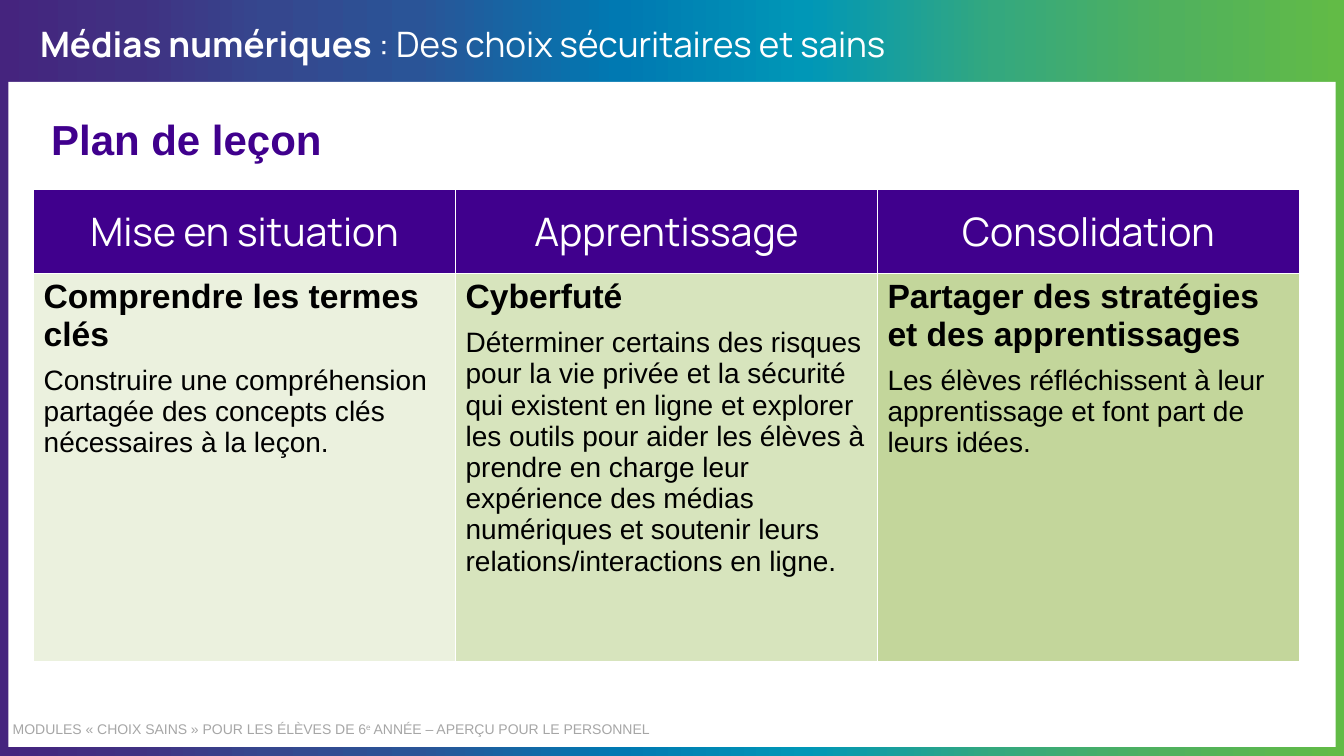
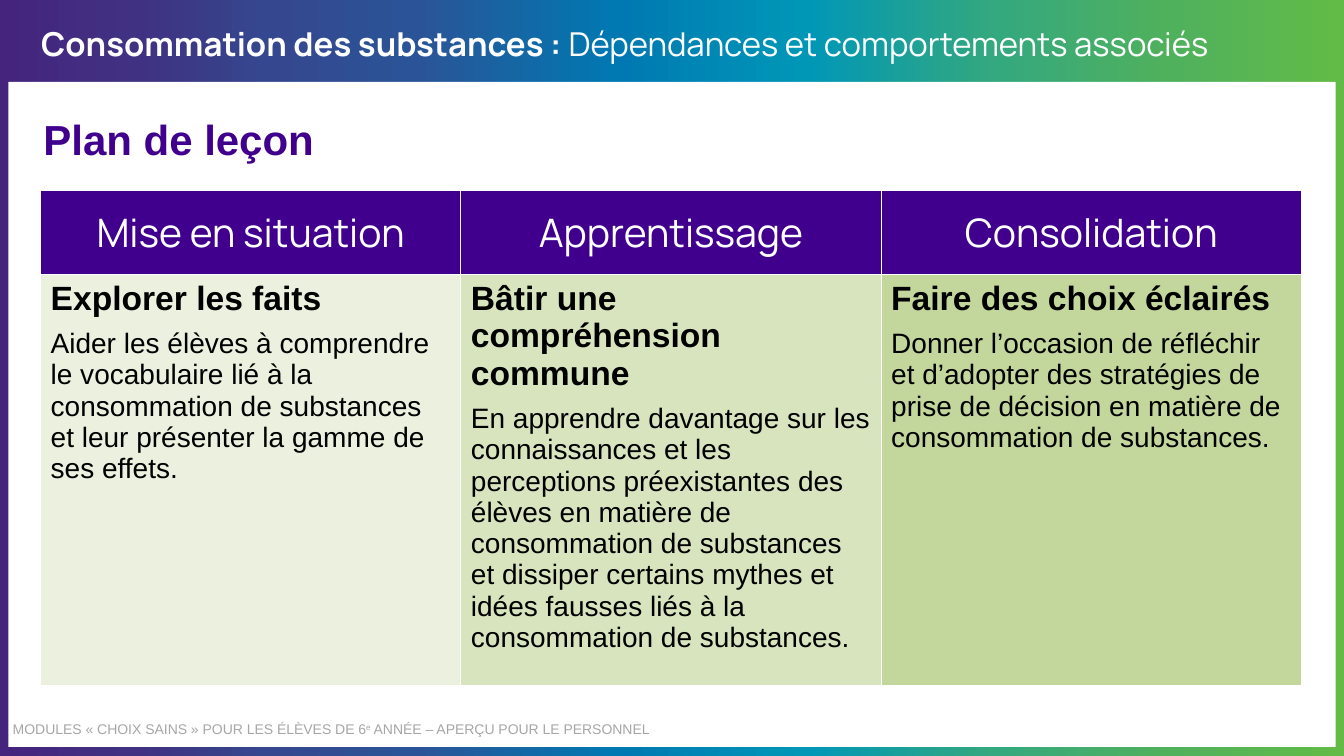
from lxml.etree import SubElement
from pptx import Presentation
from pptx.dml.color import RGBColor as RGB
from pptx.enum.shapes import MSO_SHAPE as SHAPE
from pptx.enum.text import MSO_ANCHOR as ANCHOR, PP_ALIGN as ALIGN
from pptx.oxml.ns import qn
from pptx.util import Pt

WHITE = RGB(0xFF, 0xFF, 0xFF)
BLACK = RGB(0, 0, 0)
GREY = RGB(0xA6, 0xA6, 0xA6)
PURPLE = RGB(0x40, 0x00, 0x8D)
GREENS = [RGB(0xEB, 0xF1, 0xDE), RGB(0xD7, 0xE4, 0xBD), RGB(0xC3, 0xD6, 0x9B)]
STOPS = [(0, "45247E"), (10, "403182"), (20, "35478E"), (31, "2A5497"),
         (46, "0079B2"), (60, "0097B7"), (74, "34A87E"), (87, "50B15D"),
         (100, "62BB46")]
HEADS = ["Mise en situation", "Apprentissage", "Consolidation"]
FOOTER = ["MODULES « CHOIX SAINS » POUR LES ÉLÈVES DE 6", "e",
          " ANNÉE – APERÇU POUR LE PERSONNEL"]
WIDE, HIGH = 960, 540
HEAD_H = 60

# Title: bold part, light part, size, left; heading left;
# table: left, top, column width, body height; then the three cells
PLANS = [
    dict(bold="Médias numériques ", light=": Des choix sécuritaires et sains",
         size=25, left=21.6, head=29.5, grid=(24, 135.4, 301.4, 277),
         cells=[
             ("Comprendre les termes clés",
              "Construire une compréhension partagée des concepts clés "
              "nécessaires à la leçon."),
             ("Cyberfuté",
              "Déterminer certains des risques pour la vie privée et la "
              "sécurité qui existent en ligne et explorer les outils pour "
              "aider les élèves à prendre en charge leur expérience des "
              "médias numériques et soutenir leurs relations/interactions "
              "en ligne."),
             ("Partager des stratégies et des apprentissages",
              "Les élèves réfléchissent à leur apprentissage et font part "
              "de leurs idées."),
         ]),
    dict(bold="Consommation des substances : ",
         light="Dépendances et comportements associés",
         size=23.5, left=22.3, head=24, grid=(29, 136.2, 300.2, 293.5),
         cells=[
             ("Explorer les faits",
              "Aider les élèves à comprendre le vocabulaire lié à la "
              "consommation de substances et leur présenter la gamme de "
              "ses effets."),
             ("Bâtir une compréhension commune",
              "En apprendre davantage sur les connaissances et les "
              "perceptions préexistantes des élèves en matière de "
              "consommation de substances et dissiper certains mythes et "
              "idées fausses liés à la consommation de substances."),
             ("Faire des choix éclairés",
              "Donner l’occasion de réfléchir et d’adopter des stratégies "
              "de prise de décision en matière de consommation de "
              "substances."),
         ]),
]


def style(font, size, color, name="Arial", bold=False):
    font.size, font.name, font.bold = Pt(size), name, bold
    font.color.rgb = color


def add_box(slide, left, top, width, height):
    box = slide.shapes.add_textbox(Pt(left), Pt(top), Pt(width), Pt(height))
    box.text_frame.word_wrap = True
    return box


prs = Presentation()
prs.slide_width, prs.slide_height = Pt(WIDE), Pt(HIGH)

for plan in PLANS:
    slide = prs.slides.add_slide(prs.slide_layouts[6])

    # Gradient frame and white panel
    frame = slide.shapes.add_shape(SHAPE.RECTANGLE, 0, 0, Pt(WIDE), Pt(HIGH))
    frame.fill.gradient()
    frame.fill.gradient_angle = 0
    stops = next(frame.element.iter(qn("a:gsLst")))
    stops.clear()
    for pos, code in STOPS:
        stop = SubElement(stops, qn("a:gs"), pos=str(pos * 1000))
        SubElement(stop, qn("a:srgbClr"), val=code)
    panel = slide.shapes.add_shape(SHAPE.RECTANGLE, Pt(6), Pt(58.5),
                                   Pt(WIDE - 12), Pt(475))
    panel.fill.solid()
    panel.fill.fore_color.rgb = WHITE
    for shape in (frame, panel):
        shape.line.fill.background()
        shape.shadow.inherit = False

    # Footer
    box = add_box(slide, 2, 511.2, 474.5, 19.4)
    para = box.text_frame.paragraphs[0]
    for text in FOOTER:
        para.add_run().text = text
    style(para.font, 10, GREY)
    raised = list(box.element.iter(qn("a:r")))[1]
    raised.get_or_add_rPr().set("baseline", "30000")

    # Title in the band
    box = add_box(slide, plan["left"], 0.7, 930, 61.2)
    box.text_frame.vertical_anchor = ANCHOR.MIDDLE
    para = box.text_frame.paragraphs[0]
    for text, bold in ((plan["bold"], True), (plan["light"], False)):
        run = para.add_run()
        run.text = text
        style(run.font, plan["size"], WHITE, "Manrope", bold)

    # Heading
    box = add_box(slide, plan["head"], 77.8, 216, 43.6)
    para = box.text_frame.paragraphs[0]
    para.text = "Plan de leçon"
    style(para.font, 30, PURPLE, bold=True)

    # Lesson table
    left, top, width, height = plan["grid"]
    grid = slide.shapes.add_table(2, 3, Pt(left), Pt(top), Pt(3 * width),
                                  Pt(HEAD_H + height))
    table = grid.table
    table.horz_banding = False
    table.rows[0].height, table.rows[1].height = Pt(HEAD_H), Pt(height)
    for col, (head, (topic, text)) in enumerate(zip(HEADS, plan["cells"])):
        table.columns[col].width = Pt(width)

        cell = table.cell(0, col)
        cell.fill.solid()
        cell.fill.fore_color.rgb = PURPLE
        cell.vertical_anchor = ANCHOR.MIDDLE
        para = cell.text_frame.paragraphs[0]
        para.text = head
        para.alignment = ALIGN.CENTER
        style(para.font, 28, WHITE, "Manrope")

        cell = table.cell(1, col)
        cell.fill.solid()
        cell.fill.fore_color.rgb = GREENS[col]
        para = cell.text_frame.paragraphs[0]
        para.text = topic
        para.space_after = Pt(8)
        style(para.font, 24, BLACK, bold=True)
        para = cell.text_frame.add_paragraph()
        para.text = text
        style(para.font, 20, BLACK)

    # White cell borders, placed ahead of the fill
    for props in grid.element.iter(qn("a:tcPr")):
        for spot, side in enumerate("LRTB"):
            line = SubElement(props, qn("a:ln" + side), w=str(Pt(1)))
            solid = SubElement(line, qn("a:solidFill"))
            SubElement(solid, qn("a:srgbClr"), val=str(WHITE))
            props.insert(spot, line)

prs.save("out.pptx")
